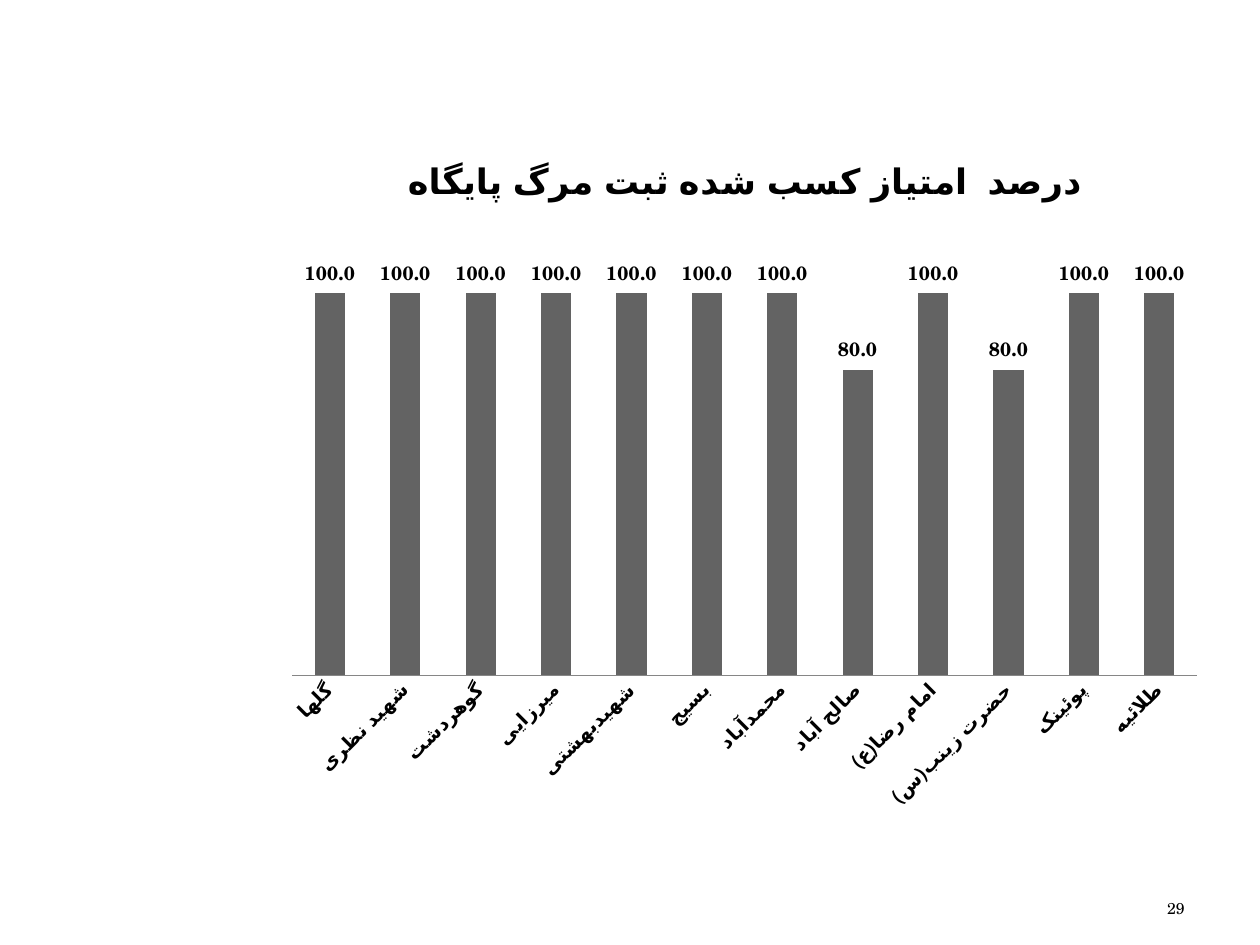
from lxml import etree
from pptx import Presentation
from pptx.chart.data import CategoryChartData
from pptx.dml.color import RGBColor
from pptx.enum.chart import XL_CHART_TYPE, XL_LABEL_POSITION, XL_TICK_MARK
from pptx.enum.text import MSO_ANCHOR, PP_ALIGN
from pptx.oxml.ns import qn
from pptx.util import Inches, Pt

COLUMN = XL_CHART_TYPE.COLUMN_CLUSTERED
OUTSIDE = XL_LABEL_POSITION.OUTSIDE_END
NO_TICK = XL_TICK_MARK.NONE
MIDDLE = MSO_ANCHOR.MIDDLE
RIGHT = PP_ALIGN.RIGHT

THEME = {
    "face": "TeX Gyre Schola",
    "ink": RGBColor(0, 0, 0),
    "bar": RGBColor(0x63, 0x63, 0x63),
    "line": RGBColor(0x86, 0x86, 0x86),
    "title": Pt(20),
    "label": Pt(11),
    "base": Pt(10),
    "page": Pt(9),
}


def style(font, size, bold=False):
    font.name = THEME["face"]
    font.size = THEME[size]
    font.bold = bold
    font.color.rgb = THEME["ink"]


deck = Presentation()
deck.slide_width, deck.slide_height = Inches(10), Inches(7.5)
wide, high = deck.slide_width, deck.slide_height
slide = deck.slides.add_slide(deck.slide_layouts[6])

page = slide.shapes.add_textbox(
    int(wide * 0.717), int(high * 0.9413), int(wide * 0.233), int(high * 0.0387))
frame = page.text_frame
frame.word_wrap = True
frame.vertical_anchor = MIDDLE
para = frame.paragraphs[0]
para.text = "29"
para.alignment = RIGHT
style(para.font, "page")

scores = {
    "طلائیه": 100,
    "پوئینک": 100,
    "حضرت زینب(س)": 80,
    "امام رضا(ع)": 100,
    "صالح آباد": 80,
    "محمدآباد": 100,
    "بسیج": 100,
    "شهیدبهشتی": 100,
    "میرزایی": 100,
    "گوهردشت": 100,
    "شهید نظری": 100,
    "گلها": 100,
}
data = CategoryChartData(number_format="0.0")
data.categories = list(scores)
data.add_series("Series 1", list(scores.values()))
chart = slide.shapes.add_chart(
    COLUMN, int(wide * 0.217), int(high * 0.1427),
    int(wide * 0.748), int(high * 0.724), data).chart
style(chart.font, "base")
chart.has_legend = False
chart.has_title = True
head = chart.chart_title.text_frame.paragraphs[0]
head.text = "درصد  امتیاز کسب شده ثبت مرگ پایگاه"
style(head.font, "title", True)
chart.chart_title.include_in_layout = False

plot = chart.plots[0]
plot.gap_width = 150
plot.overlap = -25
plot.vary_by_categories = False
fill = plot.series[0].format.fill
fill.solid()
fill.fore_color.rgb = THEME["bar"]

plot.has_data_labels = True
labels = plot.data_labels
labels.show_value = True
labels.number_format = "0.0"
labels.number_format_is_linked = False
labels.position = OUTSIDE
style(labels.font, "label", True)

names = chart.category_axis
names.reverse_order = True
names.major_tick_mark = NO_TICK
names.minor_tick_mark = NO_TICK
names.format.line.color.rgb = THEME["line"]
style(names.tick_labels.font, "label", True)
turn = names.tick_labels.font._element.getparent().getparent().getparent()
turn.find(qn("a:bodyPr")).set("rot", "-2700000")

marks = chart.value_axis
marks.visible = False
marks.has_major_gridlines = False
marks.minimum_scale = 0
marks.maximum_scale = 120
marks.tick_labels.number_format = "0.0"
marks.tick_labels.number_format_is_linked = False

area = chart._chartSpace.find(".//" + qn("c:plotArea"))
for old in area.findall(qn("c:layout")):
    area.remove(old)
place = etree.Element(qn("c:layout"))
area.insert(0, place)
manual = etree.SubElement(place, qn("c:manualLayout"))
for tag, val in (("layoutTarget", "inner"), ("xMode", "edge"), ("yMode", "edge"),
                 ("x", "0.02"), ("y", "0.12"), ("w", "0.96"), ("h", "0.67")):
    etree.SubElement(manual, qn("c:" + tag)).set("val", val)

deck.save("out.pptx")
